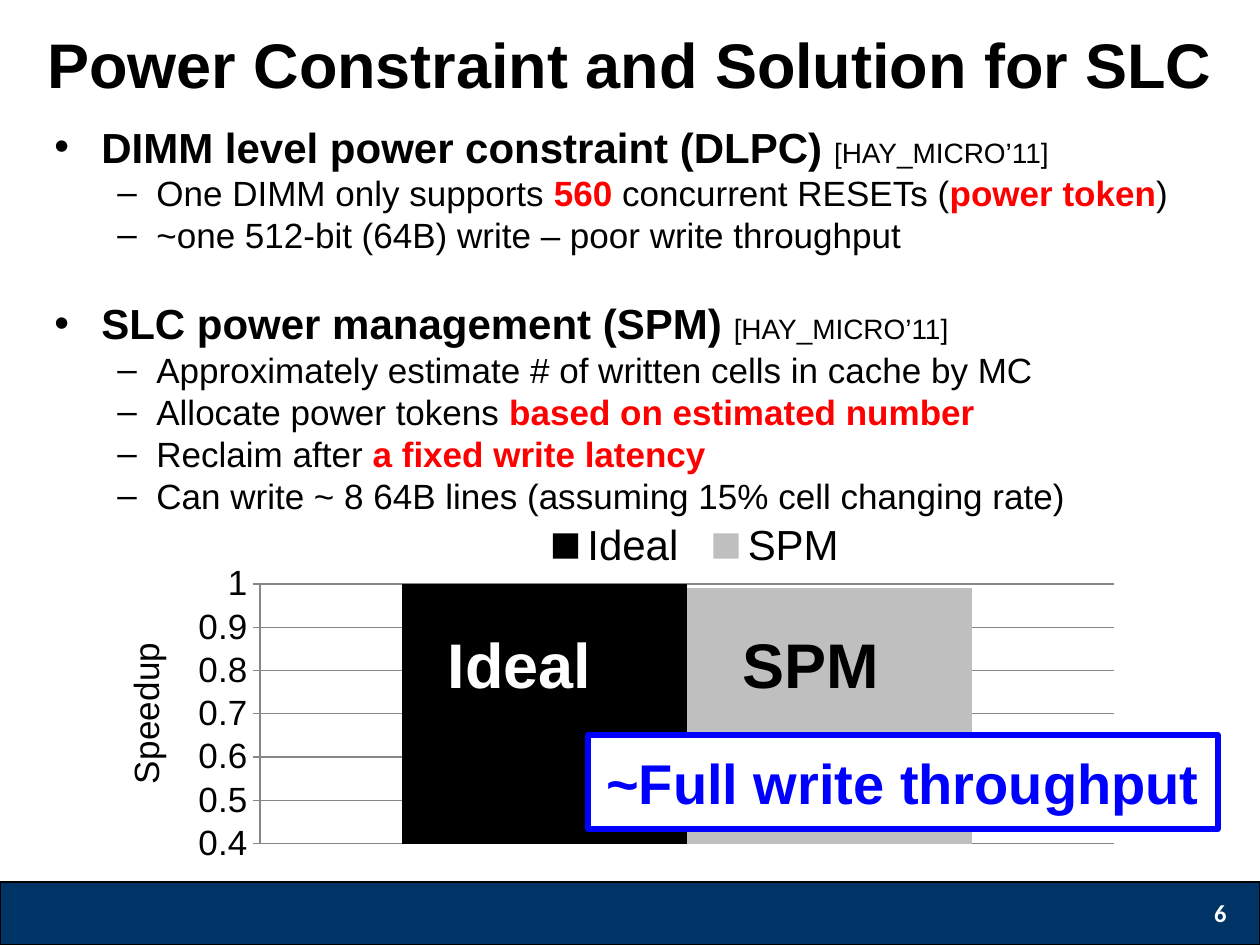
from dataclasses import dataclass
from typing import Optional

from lxml.etree import SubElement
from pptx import Presentation
from pptx.chart.data import CategoryChartData as ChartData
from pptx.dml.color import RGBColor
from pptx.enum.chart import XL_CHART_TYPE as Kind, XL_LEGEND_POSITION as Side, XL_TICK_MARK as Tick
from pptx.enum.shapes import MSO_SHAPE as Shape
from pptx.enum.text import MSO_ANCHOR as Anchor, PP_ALIGN as Align
from pptx.oxml import parse_xml
from pptx.oxml.ns import qn
from pptx.util import Pt

BLACK = RGBColor(0, 0, 0)
WHITE = RGBColor(255, 255, 255)
RED = RGBColor(255, 0, 0)
BLUE = RGBColor(0, 0, 255)
NAVY = RGBColor(0, 0x33, 0x66)
SILVER = RGBColor(0xBF, 0xBF, 0xBF)
GRAY = RGBColor(0x87, 0x87, 0x87)
SCALE = 914400 / 126  # EMU per px
CHART_NS = "http://schemas.openxmlformats.org/drawingml/2006/chart"


def px(num: int) -> int:
    return round(num * SCALE)


@dataclass
class Box:
    x: int
    y: int
    w: int
    h: int

    def emu(self) -> tuple:
        return px(self.x), px(self.y), px(self.w), px(self.h)


@dataclass
class Run:
    text: str
    size: int = 20
    color: RGBColor = BLACK
    bold: bool = False
    font: str = "Arial"


@dataclass
class Level:
    mark: str
    left: int
    hang: int


@dataclass
class Item:
    level: Level
    runs: list
    gap: int = 0


@dataclass
class Label:
    box: Box
    run: Run
    align: Align = Align.CENTER
    anchor: Anchor = Anchor.TOP
    inset: Optional[int] = None


HEAD = Level("•", 47, 47)
SUB = Level("–", 102, 39)


def head(text: str, gap: int = 0) -> Item:
    return Item(HEAD, [Run(text, 24, bold=True), Run("[HAY_MICRO’11]", 16)], gap)


def sub(*parts: str) -> Item:
    """Plain and red bold parts take turns."""
    return Item(SUB, [Run(part, color=RED, bold=True) if i % 2 else Run(part)
                      for i, part in enumerate(parts)])


ITEMS = [
    head("DIMM level power constraint (DLPC) "),
    sub("One DIMM only supports ", "560", " concurrent RESETs (", "power token", ")"),
    sub("~one 512-bit (64B) write – poor write throughput"),
    head("SLC power management (SPM) ", 24),
    sub("Approximately estimate # of written cells in cache by MC"),
    sub("Allocate power tokens ", "based on estimated number"),
    sub("Reclaim after ", "a fixed write latency"),
    sub("Can write ~ 8 64B lines (assuming 15% cell changing rate)"),
]
TITLE = Label(Box(31, 21, 1198, 84),
              Run("Power Constraint and Solution for SLC", 36, bold=True),
              anchor=Anchor.MIDDLE, inset=0)
NUMBER = Label(Box(945, 892, 294, 50), Run("6", 14, WHITE, True, "Calibri"), Align.RIGHT)
BARS = [
    Label(Box(420, 619, 199, 89), Run("Ideal", 36, WHITE, True)),
    Label(Box(721, 619, 179, 89), Run("SPM", 36, BLACK, True)),
]
CALL = Label(Box(588, 735, 630, 94), Run("~Full write throughput", 32, BLUE, True),
             anchor=Anchor.MIDDLE, inset=0)
BODY = Box(42, 115, 1187, 756)
BAND = Box(0, 882, 1260, 63)
CHART = Box(95, 483, 1039, 388)


def add_run(para, run: Run) -> None:
    item = para.add_run()
    item.text = run.text
    font = item.font
    font.name, font.size, font.bold = run.font, Pt(run.size), run.bold
    font.color.rgb = run.color


def write(shape, label: Label) -> None:
    frame = shape.text_frame
    frame.word_wrap = True
    frame.vertical_anchor = label.anchor
    if label.inset is not None:
        frame.margin_left = frame.margin_right = px(label.inset)
    para = frame.paragraphs[0]
    para.alignment = label.align
    add_run(para, label.run)


def add_label(slide, label: Label) -> None:
    write(slide.shapes.add_textbox(*label.box.emu()), label)


def add_rect(slide, box: Box, fill: RGBColor, line: RGBColor, width: float):
    rect = slide.shapes.add_shape(Shape.RECTANGLE, *box.emu())
    rect.shadow.inherit = False
    rect.fill.solid()
    rect.fill.fore_color.rgb = fill
    rect.line.color.rgb = line
    rect.line.width = Pt(width)
    return rect


def add_list(slide, box: Box, items: list) -> None:
    frame = slide.shapes.add_textbox(*box.emu()).text_frame
    frame.word_wrap = True
    for i, item in enumerate(items):
        para = frame.add_paragraph() if i else frame.paragraphs[0]
        level = item.level
        para.level = int(level is SUB)
        para.space_before = Pt(item.gap)
        props = para._p.get_or_add_pPr()
        props.set("marL", str(px(level.left)))
        props.set("indent", str(-px(level.hang)))
        SubElement(props, qn("a:buFont"), typeface="Arial")
        SubElement(props, qn("a:buChar"), char=level.mark)
        for run in item.runs:
            add_run(para, run)


def place(node, spot: int, box: Box, inner: bool = False, sized: bool = True) -> None:
    """Pin a chart part to a box on the slide."""
    for old in node.findall(qn("c:layout")):
        node.remove(old)
    vals = {"x": (box.x - CHART.x) / CHART.w, "y": (box.y - CHART.y) / CHART.h}
    tags = '<c:layoutTarget val="inner"/>' if inner else ""
    tags += '<c:xMode val="edge"/><c:yMode val="edge"/>'
    if sized:
        vals.update(w=box.w / CHART.w, h=box.h / CHART.h)
    tags += "".join(f'<c:{key} val="{val:.4f}"/>' for key, val in vals.items())
    node.insert(spot, parse_xml(f'<c:layout xmlns:c="{CHART_NS}"><c:manualLayout>'
                                f'{tags}</c:manualLayout></c:layout>'))


def add_graph(slide) -> None:
    data = ChartData()
    data.categories = ["1"]
    data.add_series("Ideal", [1])
    data.add_series("SPM", [0.99])
    chart = slide.shapes.add_chart(Kind.COLUMN_CLUSTERED, *CHART.emu(), data).chart
    chart.has_title = False
    chart.font.name, chart.font.size = "Arial", Pt(10)
    chart.font.color.rgb = BLACK
    plot = chart.plots[0]
    plot.gap_width, plot.overlap, plot.vary_by_categories = 100, 0, False
    for bar, color in zip(plot.series, (BLACK, SILVER)):
        bar.format.fill.solid()
        bar.format.fill.fore_color.rgb = color
    place(chart._chartSpace.chart.plotArea, 0, Box(260, 584, 854, 260), inner=True)

    # Axes
    chart.category_axis.visible = False
    axis = chart.value_axis
    axis.minimum_scale, axis.maximum_scale, axis.major_unit = 0.4, 1, 0.1
    axis.major_tick_mark = Tick.CROSS
    axis.tick_labels.font.size = Pt(20)
    axis.tick_labels.number_format = "General"
    axis.tick_labels.number_format_is_linked = False
    for line in (axis.format.line, axis.major_gridlines.format.line):
        line.color.rgb, line.width = GRAY, Pt(0.75)
    title = axis.axis_title
    add_run(title.text_frame.paragraphs[0], Run("Speedup"))
    title.text_frame._txBody.bodyPr.set("rot", "-5400000")
    title.text_frame._txBody.bodyPr.set("vert", "horz")
    place(title._element, 1, Box(117, 636, 40, 142), sized=False)

    # Legend
    chart.has_legend = True
    chart.legend.position = Side.TOP
    chart.legend.include_in_layout = False
    chart.legend.font.size = Pt(24)
    place(chart.legend._element, 1, Box(532, 520, 328, 52))


def main() -> None:
    deck = Presentation()
    deck.slide_width, deck.slide_height = px(1260), px(945)
    slide = deck.slides.add_slide(deck.slide_layouts[6])
    # Frame and text
    add_rect(slide, BAND, NAVY, BLACK, 0.75)
    add_label(slide, TITLE)
    add_label(slide, NUMBER)
    add_list(slide, BODY, ITEMS)
    # Chart with bar names and callout
    add_graph(slide)
    for label in BARS:
        add_label(slide, label)
    write(add_rect(slide, CALL.box, WHITE, BLUE, 3), CALL)
    deck.save("out.pptx")


if __name__ == "__main__":
    main()
